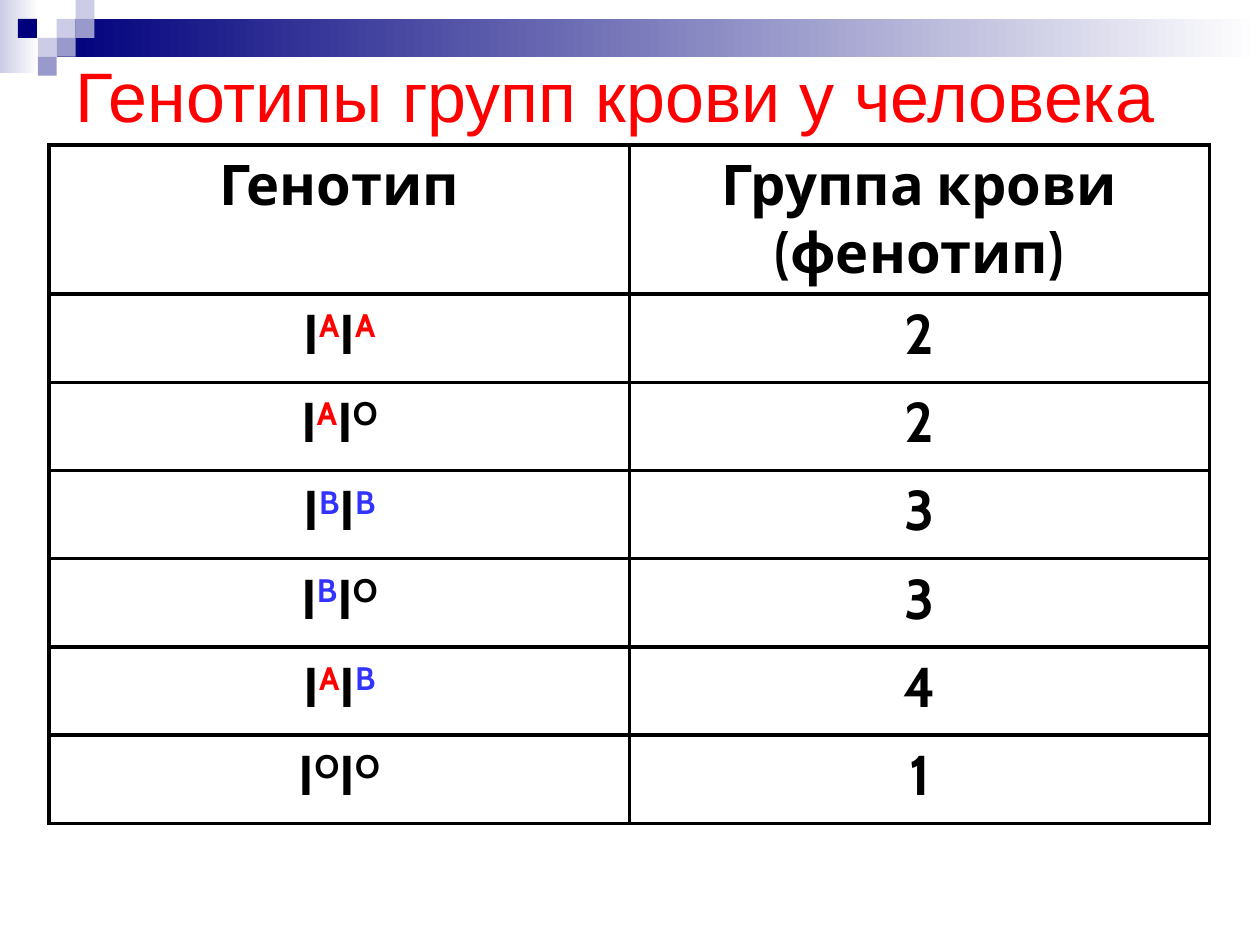
from lxml.etree import SubElement
from pptx import Presentation
from pptx.dml.color import RGBColor
from pptx.enum.shapes import MSO_SHAPE as Shape
from pptx.enum.text import MSO_ANCHOR as Anchor, PP_ALIGN as Align
from pptx.oxml.ns import qn
from pptx.util import Inches, Pt

BLACK, RED, BLUE = "000000", "FF0000", "3333FF"
NAVY, LILAC, VIOLET, WHITE = "00007D", "CCCCE6", "9999CC", "FFFFFF"
ALLELE_COLORS = {"A": RED, "B": BLUE, "O": BLACK}
HEADINGS = ("Генотип", "Группа крови (фенотип)")
GENOTYPES = (("AA", "2"), ("AO", "2"), ("BB", "3"), ("BO", "3"), ("AB", "4"), ("OO", "1"))
TILE = 0.15
TILES = ((3, 1, LILAC), (4, 0, LILAC), (4, 1, VIOLET), (2, 2, LILAC),
         (0.95, 1, NAVY), (3, 2, VIOLET), (2, 3, VIOLET))


def rgb(code):
    """Return the colour for a hex string."""
    return RGBColor.from_string(code)


def style_font(font, name, size, color, bold=False):
    """Set the typeface, size, colour and weight of a font."""
    font.name, font.size, font.bold = name, Pt(size), bold
    font.color.rgb = rgb(color)


def add_block(slide, box, color, fade_to=None):
    """Add a borderless rectangle, plain or fading from left to right."""
    block = slide.shapes.add_shape(Shape.RECTANGLE, *map(Inches, box))
    block.shadow.inherit = False
    block.line.fill.background()
    if fade_to is None:
        block.fill.solid()
        block.fill.fore_color.rgb = rgb(color)
        return
    block.fill.gradient()
    block.fill.gradient_angle = 0
    for stop, position, shade in zip(block.fill.gradient_stops, (0, 1), (color, fade_to)):
        stop.position = position
        stop.color.rgb = rgb(shade)


def add_banner(slide, left, top, width):
    """Add the fading bars and the mosaic of tiles along the top."""
    add_block(slide, (left, top, 0.31, 0.58), LILAC, WHITE)
    bar_left = 3 * TILE
    add_block(slide, (left + bar_left, top + TILE, width - bar_left, 2 * TILE), NAVY, WHITE)
    for column, row, color in TILES:
        add_block(slide, (left + column * TILE, top + row * TILE, TILE, TILE), color)


def place_title(slide, box, text):
    """Move the title placeholder into its box, in front of the banner."""
    title = slide.shapes.title
    title.left, title.top, title.width, title.height = map(Inches, box)
    title.element.getparent().append(title.element)
    frame = title.text_frame
    frame.text = text
    frame.word_wrap = True
    frame.vertical_anchor = Anchor.MIDDLE
    heading = frame.paragraphs[0]
    heading.alignment = Align.LEFT
    style_font(heading.font, "Arial", 40, RED)


def style_cell(cell):
    """Give a cell black borders, no fill and centred bold text."""
    properties = cell._tc.get_or_add_tcPr()
    for side in ("lnL", "lnR", "lnT", "lnB"):
        border = SubElement(properties, qn(f"a:{side}"), w=str(Pt(2.25)))
        solid = SubElement(border, qn("a:solidFill"))
        SubElement(solid, qn("a:srgbClr"), val=BLACK)
    cell.fill.background()
    paragraph = cell.text_frame.paragraphs[0]
    paragraph.alignment = Align.CENTER
    paragraph.space_before = Pt(6.4)
    style_font(paragraph.font, "Cabin", 32, BLACK, bold=True)
    return paragraph


def write_genotype(paragraph, alleles):
    """Write each allele as a raised coloured letter after an I."""
    for allele in alleles:
        paragraph.add_run().text = "I"
        letter = paragraph.add_run()
        letter.text = allele
        letter.font.color.rgb = rgb(ALLELE_COLORS[allele])
        letter._r.get_or_add_rPr().set("baseline", "30000")


def add_genotype_table(slide, left, top, width, height):
    """Add the table of genotypes and the blood groups they give."""
    row_count = len(GENOTYPES) + 1
    header_height = 1.18
    table = slide.shapes.add_table(
        row_count, 2, *map(Inches, (left, top, width, height))).table
    table.first_row = table.horz_banding = False
    for column in table.columns:
        column.width = Inches(width / 2)
    for row in table.rows:
        row.height = Inches((height - header_height) / len(GENOTYPES))
    table.rows[0].height = Inches(header_height)

    for index, heading in enumerate(HEADINGS):
        style_cell(table.cell(0, index)).add_run().text = heading
    for index, (alleles, blood_group) in enumerate(GENOTYPES, start=1):
        write_genotype(style_cell(table.cell(index, 0)), alleles)
        style_cell(table.cell(index, 1)).add_run().text = blood_group


def main():
    """Build the slide and save it."""
    deck = Presentation()
    deck.slide_width, deck.slide_height = Inches(10), Inches(7.5)
    slide = deck.slides.add_slide(deck.slide_layouts[5])
    add_banner(slide, 0, 0, 10)
    place_title(slide, (0.5, 0, 9, 1.5), "Генотипы групп крови у человека")
    add_genotype_table(slide, 0.39, 1.15, 9.21, 5.38)
    deck.save("out.pptx")


if __name__ == "__main__":
    main()
